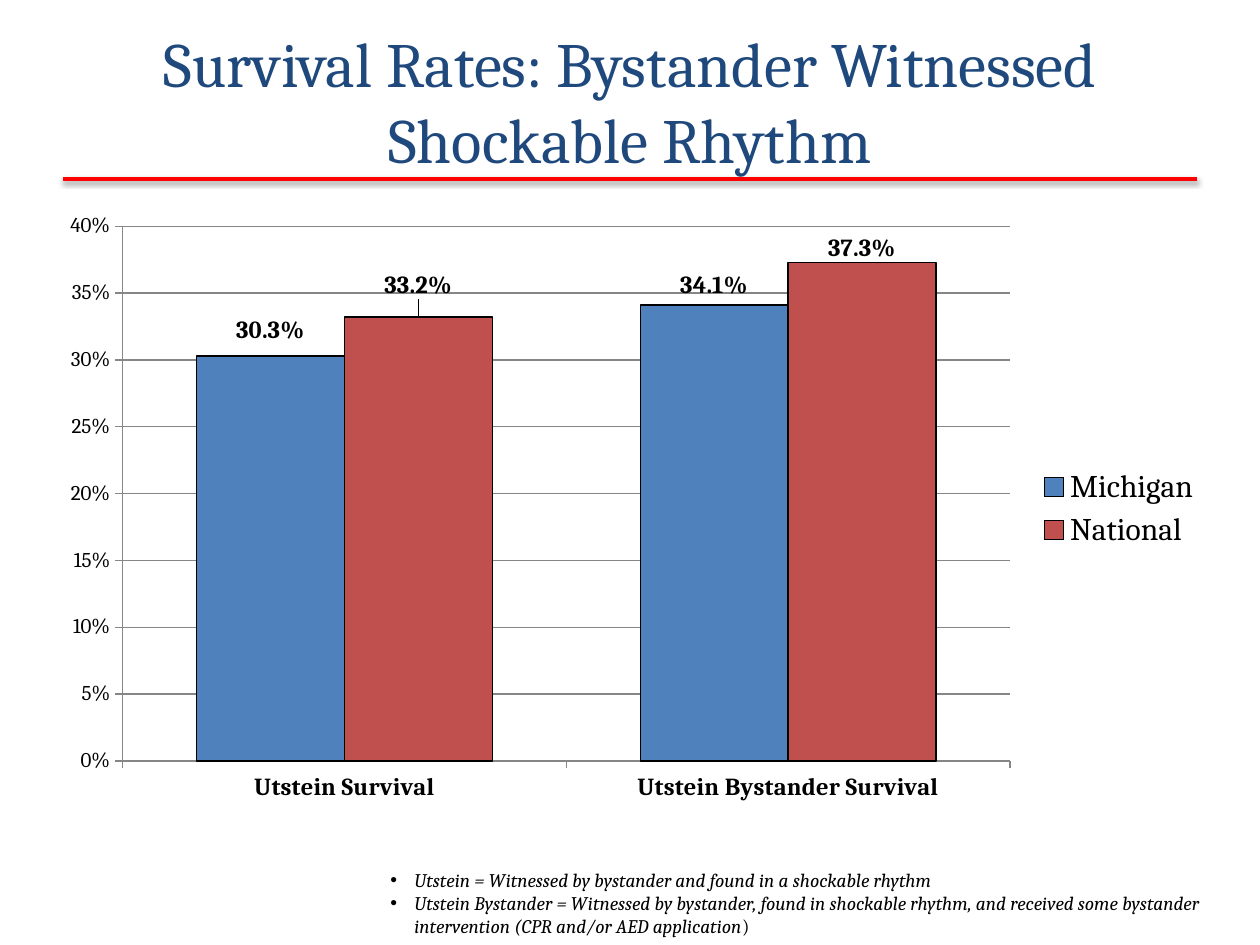
from lxml import etree
from pptx import Presentation
from pptx.chart.data import CategoryChartData
from pptx.dml.color import RGBColor
from pptx.enum.chart import XL_CHART_TYPE, XL_LABEL_POSITION, XL_LEGEND_POSITION, XL_TICK_MARK
from pptx.enum.shapes import MSO_CONNECTOR
from pptx.enum.text import MSO_ANCHOR, MSO_AUTO_SIZE, PP_ALIGN
from pptx.oxml import parse_xml
from pptx.oxml.ns import nsdecls, qn
from pptx.util import Inches, Pt

PX_PER_INCH = 126
FONT = "Cambria"
BLACK, GRID_GRAY = "000000", "868686"

CATEGORIES = ["Utstein Survival", "Utstein Bystander Survival"]
# name, fill, values, vertical label shifts by point (share of chart height)
SERIES = [
    ("Michigan", "4F81BD", (0.303, 0.341), {0: -0.01}),
    ("National", "C0504D", (0.332, 0.373), {0: -0.02, 1: 0.01}),
]
FOOTNOTES = [
    [("Utstein = Witnessed by bystander and found in a shockable rhythm", True)],
    [("Utstein Bystander = Witnessed by bystander, found in shockable rhythm, and received "
      "some bystander intervention (CPR and/or AED application", True), (")", False)],
]


def px(length):
    return round(length * Inches(1) / PX_PER_INCH)


def box_emu(box):
    return [px(length) for length in box]


def color(hex_string):
    return RGBColor.from_string(hex_string)


def style_font(font, size, hex_string=BLACK, bold=False, italic=False):
    font.name = FONT
    font.size = Pt(size)
    font.color.rgb = color(hex_string)
    font.bold = bold
    font.italic = italic


def style_line(line, hex_string, width):
    line.color.rgb = color(hex_string)
    line.width = Pt(width)


def manual_layout(**values):
    """Return a c:layout element holding the given manual layout values."""
    children = "".join(f'<c:{name} val="{value}"/>' for name, value in values.items())
    return parse_xml(f'<c:layout {nsdecls("c")}><c:manualLayout>{children}'
                     "</c:manualLayout></c:layout>")


def add_title(slide, box):
    title = slide.shapes.title
    title.left, title.top, title.width, title.height = box_emu(box)
    frame = title.text_frame
    frame.auto_size = MSO_AUTO_SIZE.NONE
    frame.word_wrap = True
    frame.vertical_anchor = MSO_ANCHOR.MIDDLE
    paragraph = frame.paragraphs[0]
    paragraph.alignment = PP_ALIGN.CENTER
    run = paragraph.add_run()
    run.text = "Survival Rates: Bystander Witnessed Shockable Rhythm"
    style_font(run.font, 36, "1F497D")


def add_title_rule(slide, left, top, width):
    rule = slide.shapes.add_connector(
        MSO_CONNECTOR.STRAIGHT, px(left), px(top), px(left + width), px(top))
    style_line(rule.line, "FF0000", 2)
    rule._element.spPr.append(parse_xml(
        f'<a:effectLst {nsdecls("a")}>'
        f'<a:outerShdw blurRad="{Pt(3.1)}" dist="{Pt(1.6)}" dir="5400000" rotWithShape="0">'
        f'<a:srgbClr val="{BLACK}"><a:alpha val="38000"/></a:srgbClr>'
        "</a:outerShdw></a:effectLst>"))


def style_axes(chart):
    value_axis, category_axis = chart.value_axis, chart.category_axis
    value_axis.minimum_scale, value_axis.maximum_scale = 0, 0.4
    value_axis.major_unit = 0.05
    value_axis.tick_labels.number_format = "0%"
    value_axis.tick_labels.number_format_is_linked = False
    value_axis.has_major_gridlines = True
    style_line(value_axis.major_gridlines.format.line, GRID_GRAY, 0.75)
    for axis, size, bold in ((value_axis, 12, False), (category_axis, 14, True)):
        axis.major_tick_mark = XL_TICK_MARK.OUTSIDE
        axis.minor_tick_mark = XL_TICK_MARK.NONE
        style_line(axis.format.line, GRID_GRAY, 0.75)
        style_font(axis.tick_labels.font, size, bold=bold)


def style_series(series, fill, label_shifts):
    series.format.fill.solid()
    series.format.fill.fore_color.rgb = color(fill)
    style_line(series.format.line, BLACK, 0.75)
    labels = series.data_labels
    labels.show_value = True
    labels.number_format = "0.0%"
    labels.number_format_is_linked = False
    labels.position = XL_LABEL_POSITION.OUTSIDE_END
    style_font(labels.font, 14, bold=True)
    for index, shift in label_shifts.items():
        label = series.points[index].data_label
        label.position = XL_LABEL_POSITION.OUTSIDE_END
        style_font(label.font, 14, bold=True)
        point_label = labels._element.xpath(f"c:dLbl[c:idx/@val={index}]")[0]
        point_label.find(qn("c:idx")).addnext(manual_layout(x=0, y=shift))


def add_survival_chart(slide, box):
    data = CategoryChartData(number_format="0.0%")
    data.categories = CATEGORIES
    for name, _, values, _ in SERIES:
        data.add_series(name, values)
    chart = slide.shapes.add_chart(
        XL_CHART_TYPE.COLUMN_CLUSTERED, *box_emu(box), data).chart
    style_font(chart.font, 18)
    chart.has_title = False
    chart.has_legend = True
    chart.legend.position = XL_LEGEND_POSITION.RIGHT
    chart.legend.include_in_layout = False
    style_font(chart.legend.font, 18)

    plot = chart.plots[0]
    plot.gap_width, plot.overlap = 100, 0
    plot.vary_by_categories = False
    style_axes(chart)
    for series, (_, fill, _, label_shifts) in zip(plot.series, SERIES):
        style_series(series, fill, label_shifts)

    plot_area = chart._chartSpace.chart.plotArea
    for layout in plot_area.findall(qn("c:layout")):
        plot_area.remove(layout)
    plot_area.insert(0, manual_layout(
        layoutTarget="inner", xMode="edge", yMode="edge", x=0.064, y=0.038, w=0.761, h=0.874))


def add_bullet(paragraph, indent):
    properties = paragraph._p.get_or_add_pPr()
    properties.set("marL", str(px(indent)))
    properties.set("indent", str(-px(indent)))
    etree.SubElement(properties, qn("a:buFont")).set("typeface", "Arial")
    etree.SubElement(properties, qn("a:buChar")).set("char", "•")


def add_footnotes(slide, box):
    frame = slide.shapes.add_textbox(*box_emu(box)).text_frame
    frame.word_wrap = True
    frame.auto_size = MSO_AUTO_SIZE.SHAPE_TO_FIT_TEXT
    for index, runs in enumerate(FOOTNOTES):
        paragraph = frame.add_paragraph() if index else frame.paragraphs[0]
        add_bullet(paragraph, 24)
        for text, italic in runs:
            run = paragraph.add_run()
            run.text = text
            style_font(run.font, 11, italic=italic)


def main():
    presentation = Presentation()
    presentation.slide_width, presentation.slide_height = px(1260), px(945)
    slide = presentation.slides.add_slide(presentation.slide_layouts.get_by_name("Title Only"))
    add_title_rule(slide, 63, 179, 1134)
    add_title(slide, (63, 32, 1134, 136))
    add_survival_chart(slide, (48, 203, 1166, 612))
    add_footnotes(slide, (378, 862, 882, 83))
    presentation.save("out.pptx")


if __name__ == "__main__":
    main()
